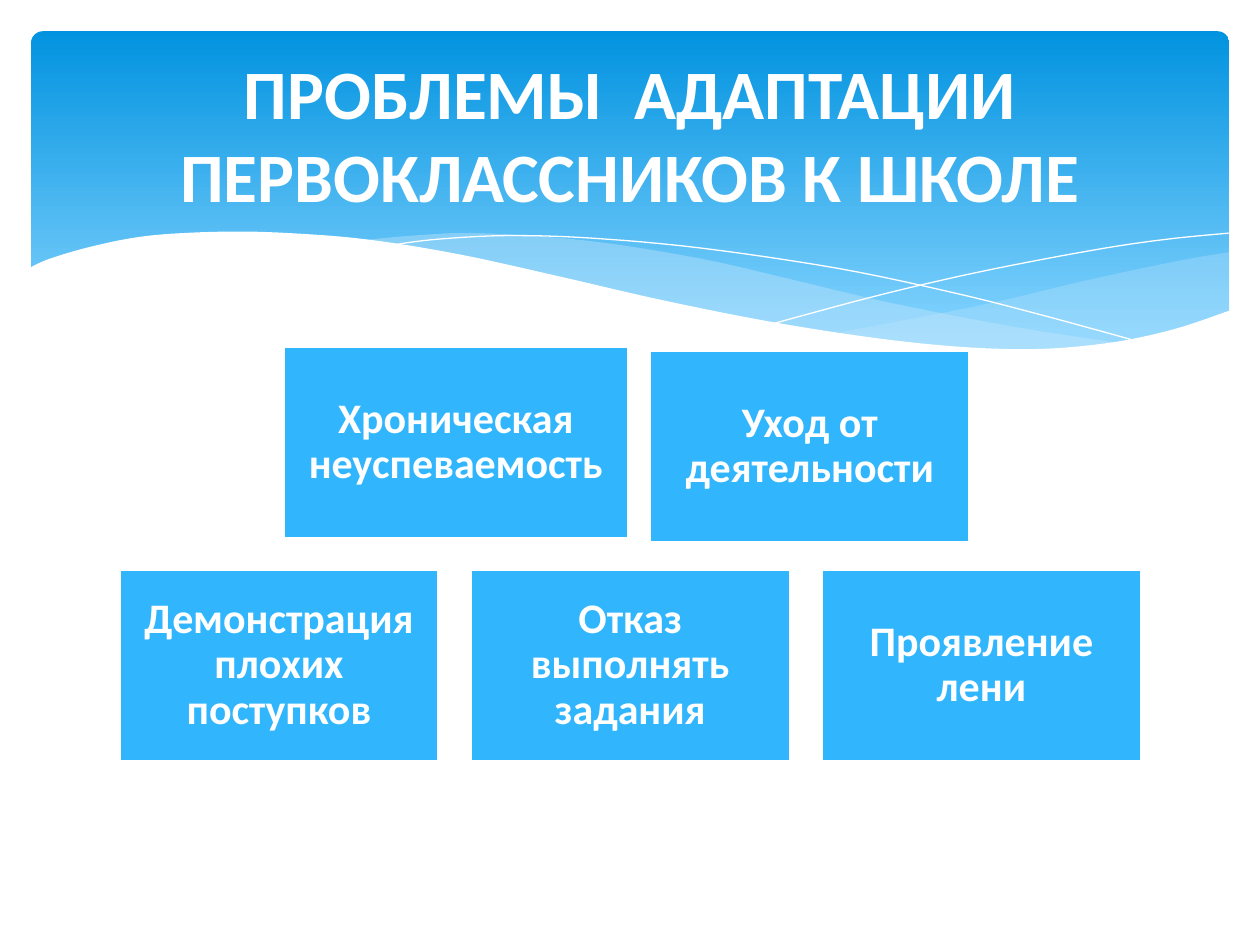
from lxml.etree import SubElement
from pptx import Presentation
from pptx.dml.color import RGBColor
from pptx.enum.shapes import MSO_SHAPE
from pptx.enum.text import MSO_ANCHOR, MSO_AUTO_SIZE, PP_ALIGN
from pptx.oxml.ns import qn
from pptx.util import Cm, Pt

rgb = RGBColor.from_string
WHITE, SKY, PALE = "FFFFFF", "31B6FD", "C6E7FC"


def write(tf, text, size, spacing=1.0, inset=0.25, color=WHITE):
    tf.word_wrap = True
    tf.auto_size = MSO_AUTO_SIZE.NONE
    tf.vertical_anchor = MSO_ANCHOR.MIDDLE
    tf.margin_left = tf.margin_right = tf.margin_top = tf.margin_bottom = Cm(inset)
    p = tf.paragraphs[0]
    p.alignment = PP_ALIGN.CENTER
    p.line_spacing = spacing
    r = p.add_run()
    r.text = text
    r.font.name, r.font.size, r.font.bold = "Calibri", Pt(size), True
    r.font.color.rgb = rgb(color)


def wave(*edges, fill=None, opacity=100, steps=6):
    """Join edges, each a smooth curve through its points in cm; no fill gives a thin line."""
    pts = []
    for edge in edges:
        ends = [edge[0], *edge, edge[-1]]
        for a, b, c, d in zip(ends, ends[1:], ends[2:], ends[3:]):
            for t in (i / steps for i in range(steps)):
                pts.append([Cm(0.5 * (2 * q + (r - p) * t
                                      + (2 * p - 5 * q + 4 * r - w) * t ** 2
                                      + (3 * q - p - 3 * r + w) * t ** 3))
                            for p, q, r, w in zip(a, b, c, d)])
        pts.append([Cm(v) for v in edge[-1]])
    fb = s.shapes.build_freeform(*pts[0])
    fb.add_line_segments(pts[1:], close=fill is not None)
    sp = fb.convert_to_shape()
    sp.shadow.inherit = False
    if fill is None:
        sp.fill.background()
        sp.line.color.rgb = rgb(WHITE)
        sp.line.width = Pt(0)
        return
    sp.fill.solid()
    sp.fill.fore_color.rgb = rgb(fill)
    sp.line.fill.background()
    if opacity < 100:
        clr = sp.fill._xPr.find(qn("a:solidFill"))[0]
        SubElement(clr, qn("a:alpha")).set("val", str(opacity * 1000))


prs = Presentation()
prs.slide_width, prs.slide_height = Cm(25.4), Cm(19.05)
s = prs.slides.add_slide(prs.slide_layouts[5])

# Header band
band = s.shapes.add_shape(MSO_SHAPE.ROUNDED_RECTANGLE, Cm(0.63), Cm(0.63), Cm(24.15), Cm(6.86))
band.adjustments[0] = 0.034
band.shadow.inherit = False
band.line.fill.background()
band.fill.gradient()
band.fill.gradient_angle = 270
for stop, (pos, color) in zip(band.fill.gradient_stops, [(0, "0293E0"), (0.9, "83D3FE")]):
    stop.position = pos
    stop.color.rgb = rgb(color)

# Waves along the bottom of the band
wave([(24.79, 5.08), (23.75, 5.26), (21.87, 5.66), (19.79, 6.15), (16.79, 6.73)],
     [(16.79, 6.73), (18.26, 6.91), (20.4, 7.06), (22.15, 6.96), (23.57, 6.68), (24.79, 6.27)],
     fill=PALE, opacity=29)
wave([(22.68, 6.93), (20.5, 6.6), (17.93, 6.1), (15.98, 5.64), (14.1, 5.21),
      (11.81, 4.85), (9.65, 4.7), (8.33, 4.75), (7.26, 4.85)],
     [(7.26, 4.85), (9.19, 5.16), (11.4, 5.64), (14.38, 6.3), (16.89, 6.76),
      (19, 7.01), (20.5, 7.06), (21.77, 7.04), (22.68, 6.93)],
     fill=PALE, opacity=40)
wave([(7.85, 4.95), (8.74, 4.83), (10.19, 4.75), (11.91, 4.8), (14.12, 5),
      (16.89, 5.41), (19.3, 5.92), (21.11, 6.38), (23.04, 6.91)])
wave([(15.57, 6.53), (17.65, 5.97), (19.71, 5.49), (22, 5.05), (23.47, 4.83), (24.77, 4.7)])
wave([(24.82, 6.25), (23.62, 6.65), (22.23, 6.93), (20.55, 7.04), (18.44, 6.91), (15.9, 6.55),
      (13.44, 6.07), (11.35, 5.59), (9.27, 5.13), (7.42, 4.83), (5.84, 4.7), (4.5, 4.67),
      (3.02, 4.75), (1.93, 4.95), (1.02, 5.21), (0.58, 5.41)],
     [(0.58, 8.36), (24.82, 8.36)],
     fill=WHITE)

# Title, brought in front of the band
title = s.shapes.title
title.left, title.top, title.width, title.height = Cm(1.27), Cm(0.94), Cm(22.86), Cm(3.48)
s.shapes._spTree.append(title._element)
write(title.text_frame, "ПРОБЛЕМЫ  АДАПТАЦИИ ПЕРВОКЛАССНИКОВ К ШКОЛЕ", 39.6)

# Problem boxes
BOX_W, BOX_H, STEP = 6.43, 3.86, 7.08
boxes = [("Хроническая неуспеваемость", 5.72, 6.99, 6.94),
         ("Уход от деятельности", 13.11, 7.07, BOX_W)]
bottom_row = ["Демонстрация плохих поступков", "Отказ выполнять задания", "Проявление лени"]
boxes += [(text, 2.41 + i * STEP, 11.48, BOX_W) for i, text in enumerate(bottom_row)]
for text, x, y, w in boxes:
    sp = s.shapes.add_shape(MSO_SHAPE.RECTANGLE, Cm(x), Cm(y), Cm(w), Cm(BOX_H))
    sp.shadow.inherit = False
    sp.fill.solid()
    sp.fill.fore_color.rgb = rgb(SKY)
    sp.line.color.rgb = rgb(WHITE)
    sp.line.width = Pt(1.25)
    write(sp.text_frame, text, 24, spacing=0.9)

prs.save("out.pptx")
